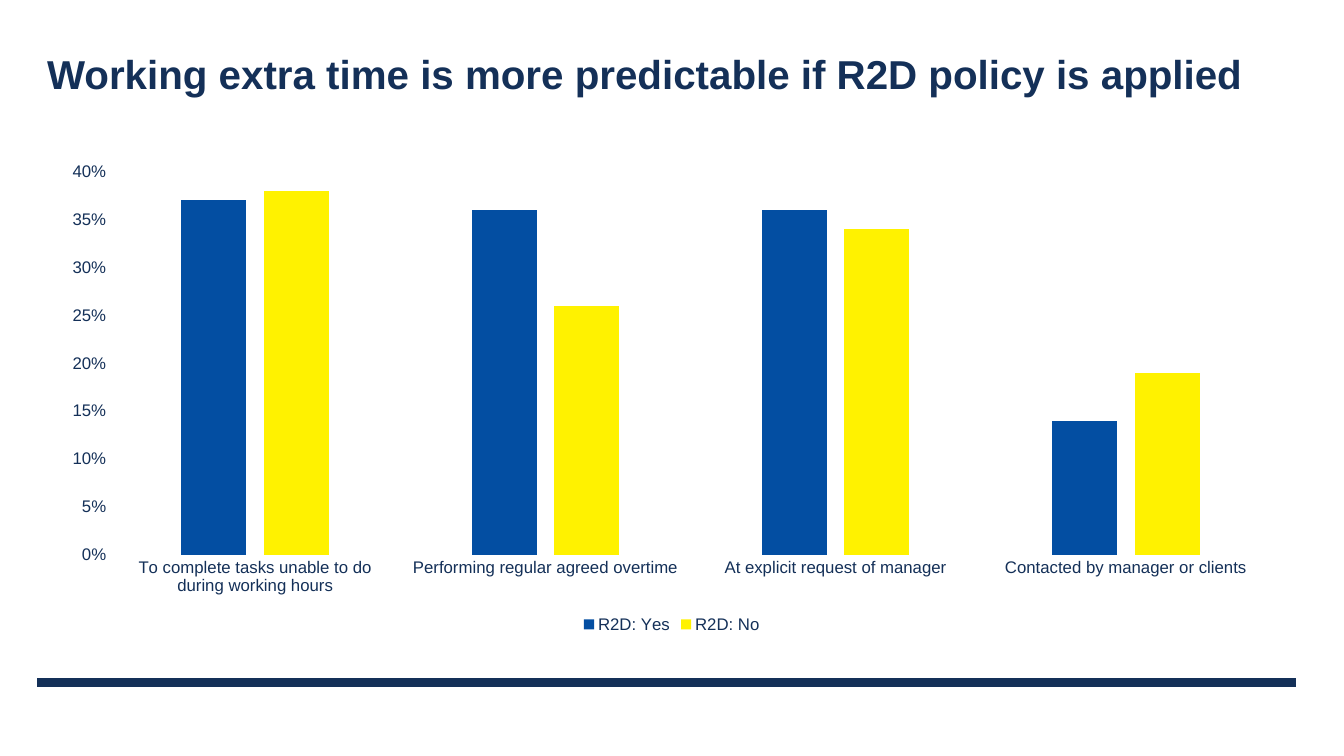
import pptx
import pptx.util
import pptx.chart.data
import pptx.dml.color
import pptx.enum.chart
import pptx.enum.shapes
import pptx.enum.text
import lxml.etree

Cm, Pt = pptx.util.Cm, pptx.util.Pt
RGBColor = pptx.dml.color.RGBColor
enum = pptx.enum.chart

# Content
TITLE = "Working extra time is more predictable if R2D policy is applied"
CATS = [
    "To complete tasks unable to do during working hours",
    "Performing regular agreed overtime",
    "At explicit request of manager",
    "Contacted by manager or clients",
]
NAVY = RGBColor(0x14, 0x30, 0x58)
BLUE = RGBColor(0x03, 0x4E, 0xA2)
YELLOW = RGBColor(0xFF, 0xF2, 0x00)
WHITE = RGBColor(0xFF, 0xFF, 0xFF)
SERIES = [
    ("R2D: Yes", (0.37, 0.36, 0.36, 0.14), BLUE),
    ("R2D: No", (0.38, 0.26, 0.34, 0.19), YELLOW),
]
FONT = "Arial"

# Layout
WIDE, HIGH = Cm(33.87), Cm(19.05)
LEFT, SPAN = Cm(0.94), Cm(31.72)
RULE_Y = Cm(17.2)


def style(font, size, color=NAVY, bold=False):
    font.name, font.size, font.bold = FONT, Pt(size), bold
    font.color.rgb = color


def add_text(slide, text, box, size, color=NAVY, bold=False):
    frame = slide.shapes.add_textbox(*box).text_frame
    frame.word_wrap = True
    frame.vertical_anchor = pptx.enum.text.MSO_ANCHOR.MIDDLE
    run = frame.paragraphs[0].add_run()
    run.text = text
    style(run.font, size, color, bold)


def add_rule(slide):
    kind = pptx.enum.shapes.MSO_CONNECTOR.STRAIGHT
    rule = slide.shapes.add_connector(kind, LEFT, RULE_Y, LEFT + SPAN, RULE_Y)
    rule.line.color.rgb = NAVY
    rule.line.width = Pt(6)
    props = rule.element.spPr
    lxml.etree.SubElement(props, pptx.oxml.ns.qn("a:effectLst"))


def add_bars(slide):
    data = pptx.chart.data.CategoryChartData(number_format="0%")
    data.categories = CATS
    for name, vals, _ in SERIES:
        data.add_series(name, vals)
    chart = slide.shapes.add_chart(
        enum.XL_CHART_TYPE.COLUMN_CLUSTERED,
        Cm(1.2), Cm(3.86), Cm(31.46), Cm(12.2), data).chart
    chart.has_title = False
    style(chart.font, 10, WHITE)

    # Bars
    plot = chart.plots[0]
    plot.gap_width, plot.overlap = 219, -27
    plot.vary_by_categories = False
    for bars, (_, _, color) in zip(plot.series, SERIES):
        bars.format.fill.solid()
        bars.format.fill.fore_color.rgb = color

    # Axes
    cat, val = chart.category_axis, chart.value_axis
    for axis in (cat, val):
        axis.major_tick_mark = axis.minor_tick_mark = enum.XL_TICK_MARK.NONE
        style(axis.tick_labels.font, 12)
    val.minimum_scale, val.maximum_scale, val.major_unit = 0, 0.4, 0.05
    val.tick_labels.number_format = "0%"
    val.tick_labels.number_format_is_linked = False
    val.format.line.fill.background()
    for line in (cat.format.line, val.major_gridlines.format.line):
        line.color.rgb = WHITE
        line.width = Pt(0.75)

    # Legend
    chart.has_legend = True
    chart.legend.position = enum.XL_LEGEND_POSITION.BOTTOM
    chart.legend.include_in_layout = False
    style(chart.legend.font, 12)


def main():
    deck = pptx.Presentation()
    deck.slide_width, deck.slide_height = WIDE, HIGH
    slide = deck.slides.add_slide(deck.slide_layouts[6])
    add_rule(slide)
    add_text(slide, TITLE, (LEFT, Cm(0.76), SPAN, Cm(2.16)),
             size=28.8, bold=True)
    add_bars(slide)
    deck.save("out.pptx")


if __name__ == "__main__":
    main()
